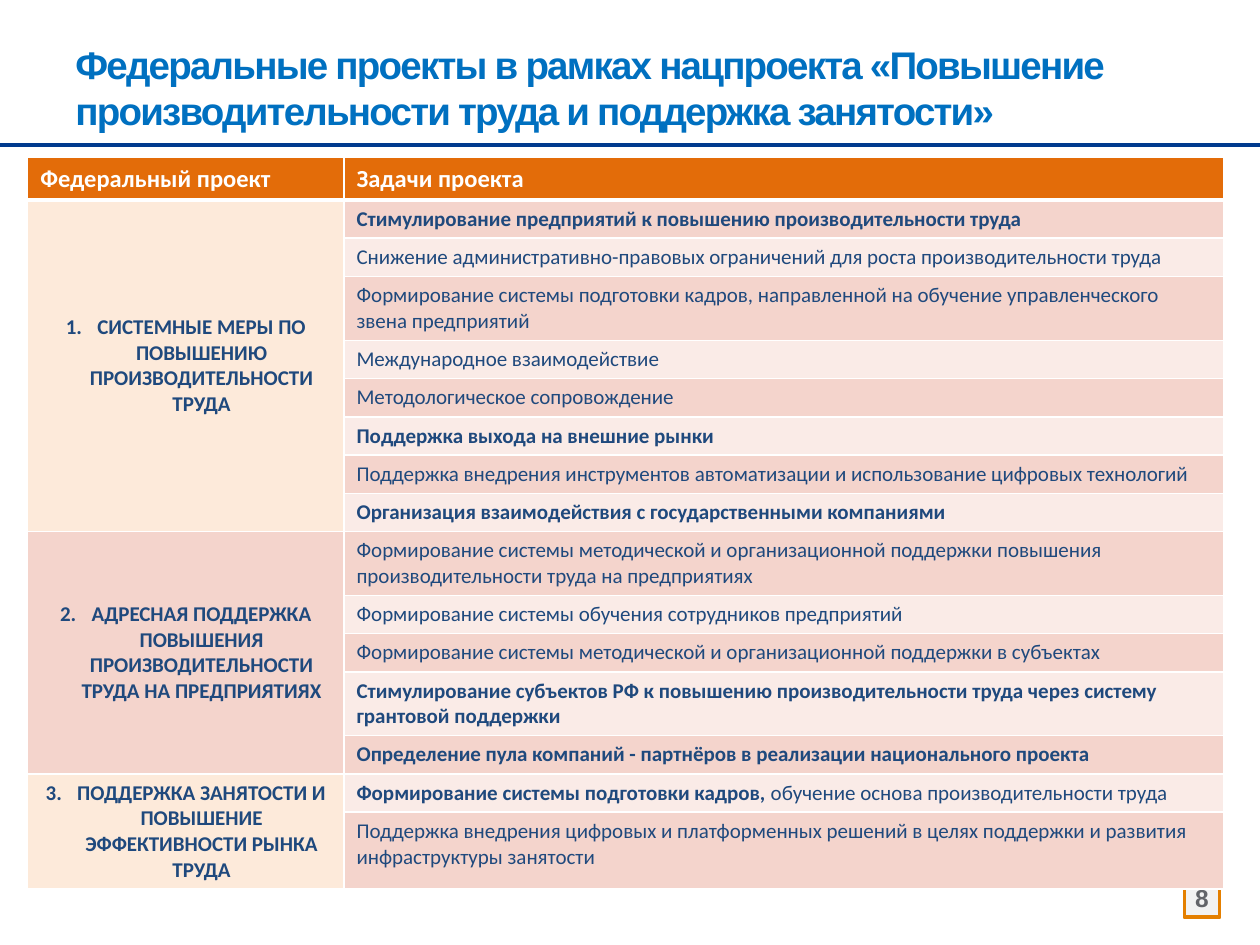
import pptx
import pptx.util
import pptx.dml.color
import pptx.enum.shapes
import pptx.enum.text
import pptx.oxml
import pptx.oxml.ns
from lxml import etree

Pt = pptx.util.Pt
ALIGN = pptx.enum.text.PP_ALIGN
ANCHOR = pptx.enum.text.MSO_ANCHOR

COLORS = {
    "title": "0070C0", "rule": "003A8E", "number_fill": "F2F2F2",
    "number_line": "E47F00", "number": "626469", "header": "E36C09",
    "white": "FFFFFF", "text": "1F497D", "cream": "FDEADA",
    "pink": "F4D4CC", "pale": "FAEBE7",
}
TITLE = ("Федеральные проекты в рамках нацпроекта «Повышение "
         "производительности труда и поддержка занятости»")
PAGE = "8"
HEADERS = ["Федеральный проект", "Задачи проекта"]
ONE_LINE, TWO_LINES, HEADER_HEIGHT = 17.28, 28.8, 19.44

# Each task: bold part, regular part, row height
PROJECTS = [
    ("СИСТЕМНЫЕ МЕРЫ ПО ПОВЫШЕНИЮ ПРОИЗВОДИТЕЛЬНОСТИ ТРУДА", "cream", [
        ("Стимулирование предприятий к повышению производительности труда", "", ONE_LINE),
        ("", "Снижение административно-правовых ограничений для роста производительности труда", ONE_LINE),
        ("", "Формирование системы подготовки кадров, направленной на обучение "
             "управленческого звена предприятий", TWO_LINES),
        ("", "Международное взаимодействие", ONE_LINE),
        ("", "Методологическое сопровождение", ONE_LINE),
        ("Поддержка выхода на внешние рынки", "", ONE_LINE),
        ("", "Поддержка внедрения инструментов автоматизации и использование "
             "цифровых технологий", ONE_LINE),
        ("Организация взаимодействия с государственными компаниями", "", ONE_LINE),
    ]),
    ("АДРЕСНАЯ ПОДДЕРЖКА ПОВЫШЕНИЯ ПРОИЗВОДИТЕЛЬНОСТИ ТРУДА НА ПРЕДПРИЯТИЯХ", "pink", [
        ("", "Формирование системы методической и организационной поддержки повышения "
             "производительности труда на предприятиях", TWO_LINES),
        ("", "Формирование системы обучения сотрудников предприятий", ONE_LINE),
        ("", "Формирование системы методической и организационной поддержки в субъектах", ONE_LINE),
        ("Стимулирование субъектов РФ к повышению производительности труда через систему "
         "грантовой поддержки", "", TWO_LINES),
        ("Определение пула компаний - партнёров в реализации национального проекта", "", ONE_LINE),
    ]),
    ("ПОДДЕРЖКА ЗАНЯТОСТИ И ПОВЫШЕНИЕ ЭФФЕКТИВНОСТИ РЫНКА ТРУДА", "cream", [
        ("Формирование системы подготовки кадров,",
         " обучение основа производительности труда", ONE_LINE),
        ("", "Поддержка внедрения цифровых и платформенных решений в целях поддержки "
             "и развития инфраструктуры занятости", TWO_LINES),
    ]),
]


def rgb(name):
    return pptx.dml.color.RGBColor.from_string(COLORS[name])


def set_font(font, size, color, bold=None, family="Calibri"):
    font.name, font.size, font.bold = family, Pt(size), bold
    font.color.rgb = rgb(color)


def style_cell(cell, color, top=1, bottom=1):
    cell.fill.solid()
    cell.fill.fore_color.rgb = rgb(color)
    props = cell._tc.get_or_add_tcPr()
    for position, (side, width) in enumerate(zip("LRTB", (1, 1, top, bottom))):
        border = pptx.oxml.parse_xml(
            f'<a:ln{side} xmlns:a="http://schemas.openxmlformats.org/drawingml/2006/main" '
            f'w="{Pt(width)}"><a:solidFill><a:srgbClr val="{COLORS["white"]}"/>'
            f'</a:solidFill></a:ln{side}>')
        props.insert(position, border)


def number_paragraph(paragraph, number):
    props = paragraph._p.get_or_add_pPr()
    props.set("marL", str(Pt(18)))
    props.set("indent", str(-Pt(18)))
    bullet = etree.SubElement(props, pptx.oxml.ns.qn("a:buAutoNum"), type="arabicPeriod")
    if number > 1:
        bullet.set("startAt", str(number))


def add_projects(slide):
    heights = [HEADER_HEIGHT] + [task[2] for project in PROJECTS for task in project[2]]
    table = slide.shapes.add_table(len(heights), 2, Pt(15.84), Pt(90),
                                   Pt(683.28), Pt(412.56)).table
    for column, width in zip(table.columns, (180.72, 502.56)):
        column.width = Pt(width)
    for row, height in zip(table.rows, heights):
        row.height = Pt(height)

    for column, header in enumerate(HEADERS):
        cell = table.cell(0, column)
        cell.text = header
        style_cell(cell, "header", bottom=3)
        set_font(cell.text_frame.paragraphs[0].font, 14, "white", True)

    row = 1
    for number, (project, color, tasks) in enumerate(PROJECTS, 1):
        name_cell = table.cell(row, 0)
        name_cell.merge(table.cell(row + len(tasks) - 1, 0))
        name_cell.text = project
        name_cell.vertical_anchor = ANCHOR.MIDDLE
        name = name_cell.text_frame.paragraphs[0]
        name.alignment = ALIGN.CENTER
        number_paragraph(name, number)
        set_font(name.font, 12, "text", True)
        for bold_part, regular_part, _ in tasks:
            top = 3 if row == 1 else 1
            style_cell(table.cell(row, 0), color, top=top)
            task_cell = table.cell(row, 1)
            style_cell(task_cell, "pink" if row % 2 else "pale", top=top)
            task = task_cell.text_frame.paragraphs[0]
            set_font(task.font, 12, "text")
            for text, bold in ((bold_part, True), (regular_part, False)):
                if text:
                    run = task.add_run()
                    run.text = text
                    run.font.bold = bold
            row += 1


def add_rule(slide):
    rule = slide.shapes.add_connector(pptx.enum.shapes.MSO_CONNECTOR.STRAIGHT,
                                      Pt(0), Pt(82.8), Pt(720), Pt(82.8))
    rule.line.color.rgb = rgb("rule")
    rule.line.width = Pt(2.5)
    etree.SubElement(rule._element.spPr, pptx.oxml.ns.qn("a:effectLst"))


def add_page_number(slide):
    badge = slide.shapes.add_shape(pptx.enum.shapes.MSO_SHAPE.RECTANGLE,
                                   Pt(676.8), Pt(504), Pt(20.16), Pt(20.16))
    badge.shadow.inherit = False
    badge.fill.solid()
    badge.fill.fore_color.rgb = rgb("number_fill")
    badge.line.color.rgb = rgb("number_line")
    badge.line.width = Pt(2)
    frame = badge.text_frame
    frame.word_wrap = False
    frame.vertical_anchor = ANCHOR.MIDDLE
    frame.margin_left = frame.margin_right = Pt(5.76)
    frame.margin_top = frame.margin_bottom = Pt(5.76)
    frame.text = PAGE
    page = frame.paragraphs[0]
    page.alignment = ALIGN.CENTER
    page.line_spacing = 0.9
    set_font(page.font, 14, "number", True, "Arial")


def add_title(slide):
    frame = slide.shapes.add_textbox(Pt(36), Pt(18.72), Pt(630), Pt(61.2)).text_frame
    frame.word_wrap = True
    frame.vertical_anchor = ANCHOR.BOTTOM
    frame.text = TITLE
    title = frame.paragraphs[0]
    set_font(title.font, 22, "title", True, "Arial")
    title.runs[0]._r.get_or_add_rPr().set("spc", "-100")


def main():
    deck = pptx.Presentation()
    deck.slide_width, deck.slide_height = Pt(720), Pt(540)
    slide = deck.slides.add_slide(deck.slide_layouts[6])
    add_rule(slide)
    add_page_number(slide)
    add_projects(slide)
    add_title(slide)
    deck.save("out.pptx")


if __name__ == "__main__":
    main()
